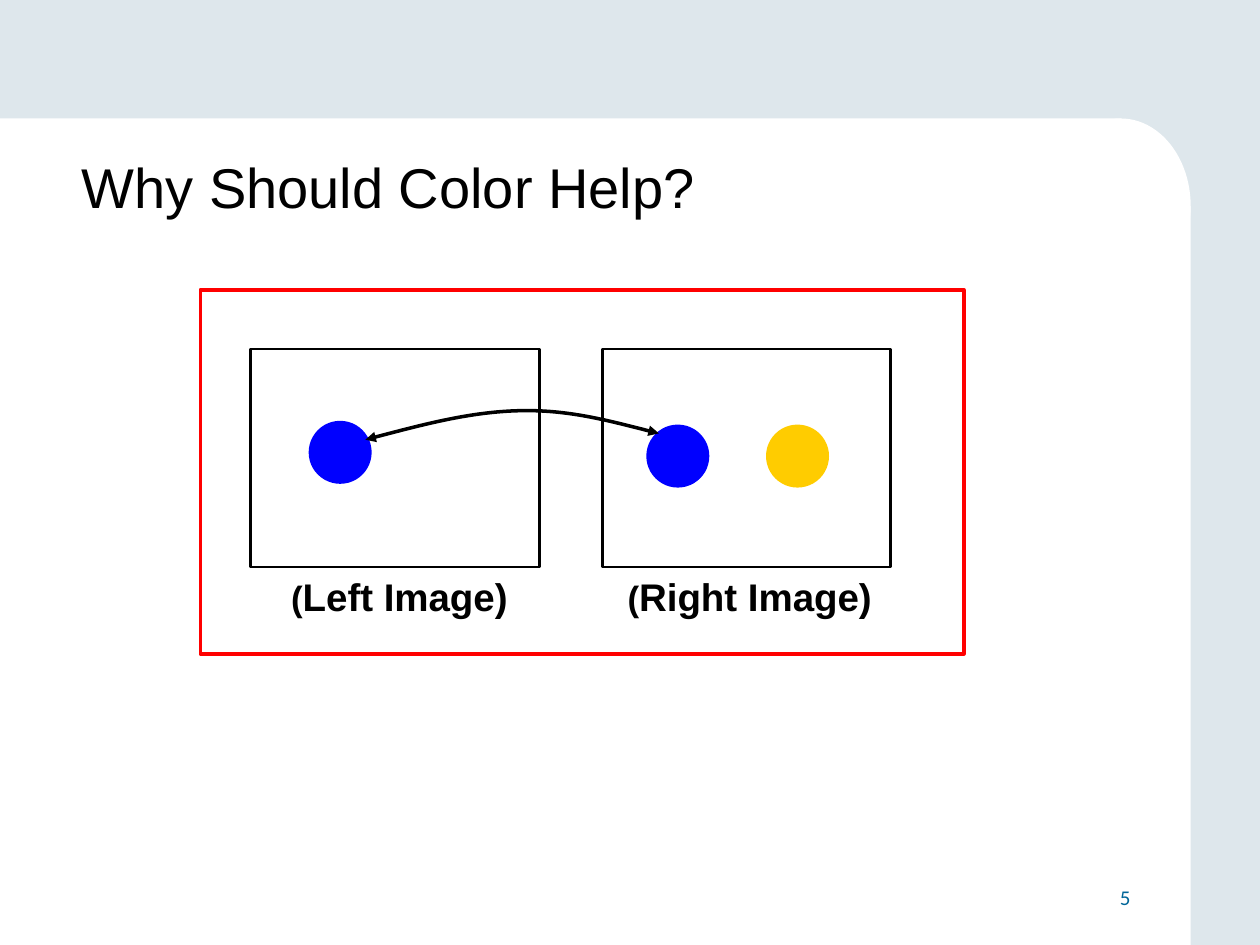
from lxml import etree
from pptx import Presentation
from pptx.dml.color import RGBColor
from pptx.enum.shapes import MSO_SHAPE
from pptx.enum.text import MSO_ANCHOR, PP_ALIGN
from pptx.oxml.ns import qn
from pptx.util import Inches, Pt

RECT, OVAL = MSO_SHAPE.RECTANGLE, MSO_SHAPE.OVAL
TOP, MIDDLE = MSO_ANCHOR.TOP, MSO_ANCHOR.MIDDLE
LEFT, CENTER, RIGHT = PP_ALIGN.LEFT, PP_ALIGN.CENTER, PP_ALIGN.RIGHT

WIDTH, HEIGHT = 10, 7.5
BLACK, WHITE, BLUE, YELLOW = "000000", "FFFFFF", "0000FF", "FFCC00"

# Two image frames on a shared row
FRAME_LEFT, FRAME_TOP = 1.99, 2.77
FRAME_WIDTH, FRAME_HEIGHT = 2.29, 1.73
FRAME_STEP = 2.79
DOT = 0.5


def color(value):
    return RGBColor.from_string(value)


def style(shape, fill=None, line=None, weight=1.5):
    shape.shadow.inherit = False
    if fill:
        shape.fill.solid()
        shape.fill.fore_color.rgb = color(fill)
    else:
        shape.fill.background()
    if line:
        shape.line.color.rgb = color(line)
        shape.line.width = Pt(weight)
    else:
        shape.line.fill.background()


def add_figure(page, kind, left, top, width, height, **look):
    shape = page.shapes.add_shape(kind, *map(Inches, (left, top, width, height)))
    style(shape, **look)


def add_text(page, area, spans, font="Arial", ink=BLACK, bold=False,
             align=LEFT, anchor=TOP, spacing=None):
    """Add one paragraph; spans are (text, size) pairs."""
    box = page.shapes.add_textbox(*map(Inches, area))
    frame = box.text_frame
    frame.word_wrap = True
    frame.vertical_anchor = anchor
    para = frame.paragraphs[0]
    para.alignment = align
    para.line_spacing = spacing
    para.font.name = font
    para.font.bold = bold
    para.font.color.rgb = color(ink)
    for text, size in spans:
        span = para.add_run()
        span.text = text
        span.font.size = Pt(size)


def add_curved_arrow(page, points):
    """Draw cubic curves through a start point and triples of control points."""
    builder = page.shapes.build_freeform(*points[0], scale=Inches(1) / 100)
    builder.add_line_segments(points[1:], close=False)
    arrow = builder.convert_to_shape()
    style(arrow, line=BLACK, weight=2)

    # Turn each three line segments into one cubic curve
    outline = next(arrow._element.iter(qn("a:path")))
    segments = outline.findall(qn("a:lnTo"))
    for start in range(0, len(segments), 3):
        curve = etree.SubElement(outline, qn("a:cubicBezTo"))
        for segment in segments[start:start + 3]:
            curve.append(segment[0])
            outline.remove(segment)

    # Arrowheads at both ends
    line = arrow.line._get_or_add_ln()
    for end in ("a:headEnd", "a:tailEnd"):
        etree.SubElement(line, qn(end), type="triangle")


def add_backdrop(page):
    page.background.fill.solid()
    page.background.fill.fore_color.rgb = color("DEE7EC")
    top, right, corner_width, corner_height = 0.94, 9.45, 1.11, 1.39
    middle = top + corner_height / 2
    corner_left = right - corner_width
    add_figure(page, RECT, 0, top, right - corner_width / 2, HEIGHT - top, fill=WHITE)
    add_figure(page, OVAL, corner_left, top, corner_width, corner_height, fill=WHITE)
    add_figure(page, RECT, 5.35, middle, right - 5.35, HEIGHT - middle, fill=WHITE)


def add_diagram(page):
    add_figure(page, RECT, 1.59, 2.3, 6.06, 2.89, fill=WHITE, line="FF0000", weight=2)

    # Frames and captions
    captions = [("Left Image)", 2.01, 2.32), ("Right Image)", 4.66, 2.58)]
    for column, (caption, left, width) in enumerate(captions):
        add_figure(page, RECT, FRAME_LEFT + column * FRAME_STEP, FRAME_TOP,
                   FRAME_WIDTH, FRAME_HEIGHT, line=BLACK)
        add_text(page, (left, 4.57, width, 0.39), [("(", 20), (caption, 22)],
                 bold=True, align=CENTER, spacing=0.8)

    # Colored dots and the match between them
    for left, top, fill in ((2.45, 3.34, BLUE), (5.13, 3.37, BLUE), (6.08, 3.37, YELLOW)):
        add_figure(page, OVAL, left, top, DOT, DOT, fill=fill)
    add_curved_arrow(page, [(290, 349), (332, 338), (373, 327), (412, 326),
                            (451, 325), (487, 335), (523, 344)])


def main():
    deck = Presentation()
    deck.slide_width, deck.slide_height = Inches(WIDTH), Inches(HEIGHT)
    page = deck.slides.add_slide(deck.slide_layouts[6])
    add_backdrop(page)
    add_text(page, (0.55, 1.11, 8.77, 0.73), [("Why Should Color Help?", 32)],
             anchor=MIDDLE)
    add_text(page, (7.17, 6.92, 1.9, 0.4), [("5", 12)], font="Calibri",
             ink="006699", align=RIGHT, anchor=MIDDLE)
    add_diagram(page)
    deck.save("out.pptx")


if __name__ == "__main__":
    main()
